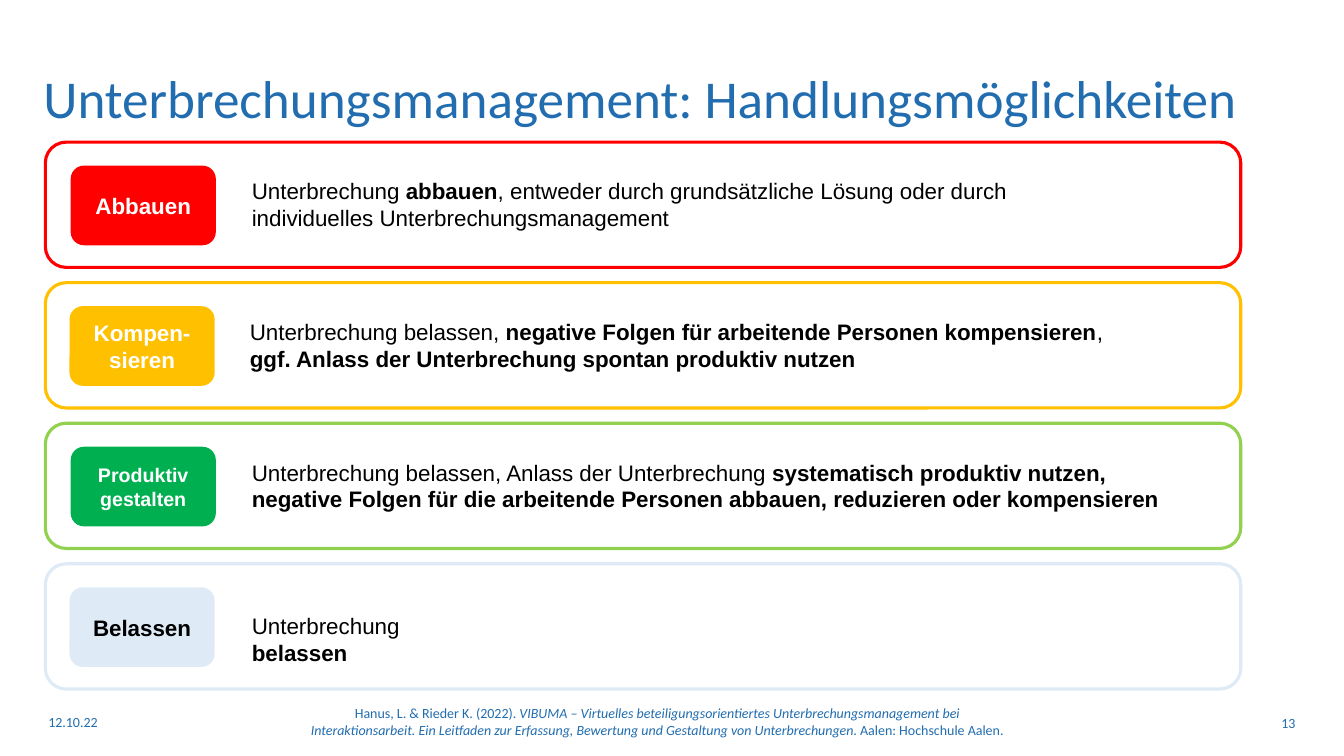
from pptx import Presentation
from pptx.dml.color import RGBColor
from pptx.enum.shapes import MSO_SHAPE
from pptx.enum.text import MSO_ANCHOR, MSO_AUTO_SIZE, PP_ALIGN
from pptx.util import Pt

ROUNDED = MSO_SHAPE.ROUNDED_RECTANGLE
TOP, MIDDLE = MSO_ANCHOR.TOP, MSO_ANCHOR.MIDDLE
NO_FIT = MSO_AUTO_SIZE.NONE
LEFT, CENTER, RIGHT = PP_ALIGN.LEFT, PP_ALIGN.CENTER, PP_ALIGN.RIGHT

BLUE = RGBColor(0x21, 0x6D, 0xAF)
RED = RGBColor(0xFF, 0x00, 0x00)
AMBER = RGBColor(0xFF, 0xC0, 0x00)
GREEN = RGBColor(0x00, 0xB0, 0x50)
LIGHT_GREEN = RGBColor(0x92, 0xD0, 0x50)
PALE_BLUE = RGBColor(0xDE, 0xEB, 0xF7)
WHITE = RGBColor(0xFF, 0xFF, 0xFF)
BLACK = RGBColor(0x00, 0x00, 0x00)

ROW_TOP, ROW_PITCH = 101.5, 100.4

# Per option: label, label size, label colour, badge fill, frame colour,
# badge left, text box (left, offset from frame, width, height), (text, bold) runs
OPTIONS = [
    ("Abbauen", 16, WHITE, RED, RED, 50.5, (172.8, 21.8, 602.6, 46),
     [("Unterbrechung", False), (" abbauen", True),
      (", entweder durch grundsätzliche Lösung oder durch "
       "individuelles Unterbrechungsmanagement", False)]),
    ("Kompen-sieren", 16, WHITE, AMBER, AMBER, 49.7, (171.4, 22, 696.2, 46),
     [("Unterbrechung belassen, ", False),
      ("negative Folgen für arbeitende Personen kompensieren", True),
      (", \n", False),
      ("ggf. Anlass der Unterbrechung spontan produktiv nutzen", True)]),
    ("Produktiv gestalten", 14, WHITE, GREEN, LIGHT_GREEN, 50.5,
     (172.8, 21.8, 696.2, 65.5),
     [("Unterbrechung belassen, Anlass der Unterbrechung ", False),
      ("systematisch produktiv nutzen, \nnegative Folgen für die arbeitende "
       "Personen abbauen, reduzieren oder kompensieren", True)]),
    ("Belassen", 16, BLACK, PALE_BLUE, PALE_BLUE, 49.7,
     (172.8, 30.8, 175.7, 26.6),
     [("Unterbrechung ", False), ("belassen", True)]),
]


def add_run(p, text, font, size, color, bold=False, italic=False):
    """Add text to the paragraph; a newline becomes a line break."""
    for i, line in enumerate(text.split("\n")):
        if i:
            p.add_line_break()
        if line:
            r = p.add_run()
            r.text = line
            r.font.name = font
            r.font.size = Pt(size)
            r.font.color.rgb = color
            r.font.bold = bold
            r.font.italic = italic


def set_up_text(sp, anchor, align):
    tf = sp.text_frame
    tf.word_wrap = True
    tf.auto_size = NO_FIT
    tf.vertical_anchor = anchor
    p = tf.paragraphs[0]
    p.alignment = align
    return p


def add_text_box(s, box, anchor=TOP, align=LEFT):
    sp = s.shapes.add_textbox(*map(Pt, box))
    return set_up_text(sp, anchor, align)


def add_rounded(s, box):
    sp = s.shapes.add_shape(ROUNDED, *map(Pt, box))
    sp.shadow.inherit = False
    return sp


def add_frame(s, top, color):
    sp = add_rounded(s, (32.4, top, 853.9, 89.5))
    sp.fill.background()
    sp.line.color.rgb = color
    sp.line.width = Pt(2.25)


def add_badge(s, left, top, label, size, color, fill):
    sp = add_rounded(s, (left, top, 103.7, 56.9))
    sp.fill.solid()
    sp.fill.fore_color.rgb = fill
    sp.line.fill.background()
    p = set_up_text(sp, MIDDLE, CENTER)
    add_run(p, label, "Arial", size, color, bold=True)


def add_title(s, text):
    sp = s.shapes.title
    sp.left, sp.top, sp.width, sp.height = map(Pt, (23.8, 43.2, 905, 59))
    p = set_up_text(sp, MIDDLE, LEFT)
    p.line_spacing = 0.9
    add_run(p, text, "Calibri", 38, BLUE)


def add_footer(s, box, align, runs):
    p = add_text_box(s, box, MIDDLE, align)
    for text, italic in runs:
        add_run(p, text, "Calibri", 10, BLUE, italic=italic)


def main():
    prs = Presentation()
    prs.slide_width, prs.slide_height = Pt(960), Pt(540)
    s = prs.slides.add_slide(prs.slide_layouts[5])

    add_title(s, "Unterbrechungsmanagement: Handlungsmöglichkeiten")

    for i, option in enumerate(OPTIONS):
        label, size, color, fill, border, badge_left, text_box, runs = option
        top = ROW_TOP + i * ROW_PITCH
        add_frame(s, top, border)
        add_badge(s, badge_left, top + 16.8, label, size, color, fill)
        left, offset, width, height = text_box
        p = add_text_box(s, (left, top + offset, width, height))
        for text, bold in runs:
            add_run(p, text, "Arial", 16, BLACK, bold)

    add_footer(s, (27.4, 501.1, 169.9, 28.8), LEFT, [("12.10.22", False)])
    add_footer(s, (208.1, 503.3, 522.7, 23.8), CENTER, [
        ("Hanus, L. & Rieder K. (2022). ", False),
        ("VIBUMA – Virtuelles beteiligungsorientiertes "
         "Unterbrechungsmanagement bei Interaktionsarbeit. Ein Leitfaden zur "
         "Erfassung, Bewertung und Gestaltung von Unterbrechungen. ", True),
        ("Aalen: Hochschule Aalen.", False)])
    add_footer(s, (737.3, 501.8, 195.1, 28.8), RIGHT, [("13", False)])

    prs.save("out.pptx")


if __name__ == "__main__":
    main()
